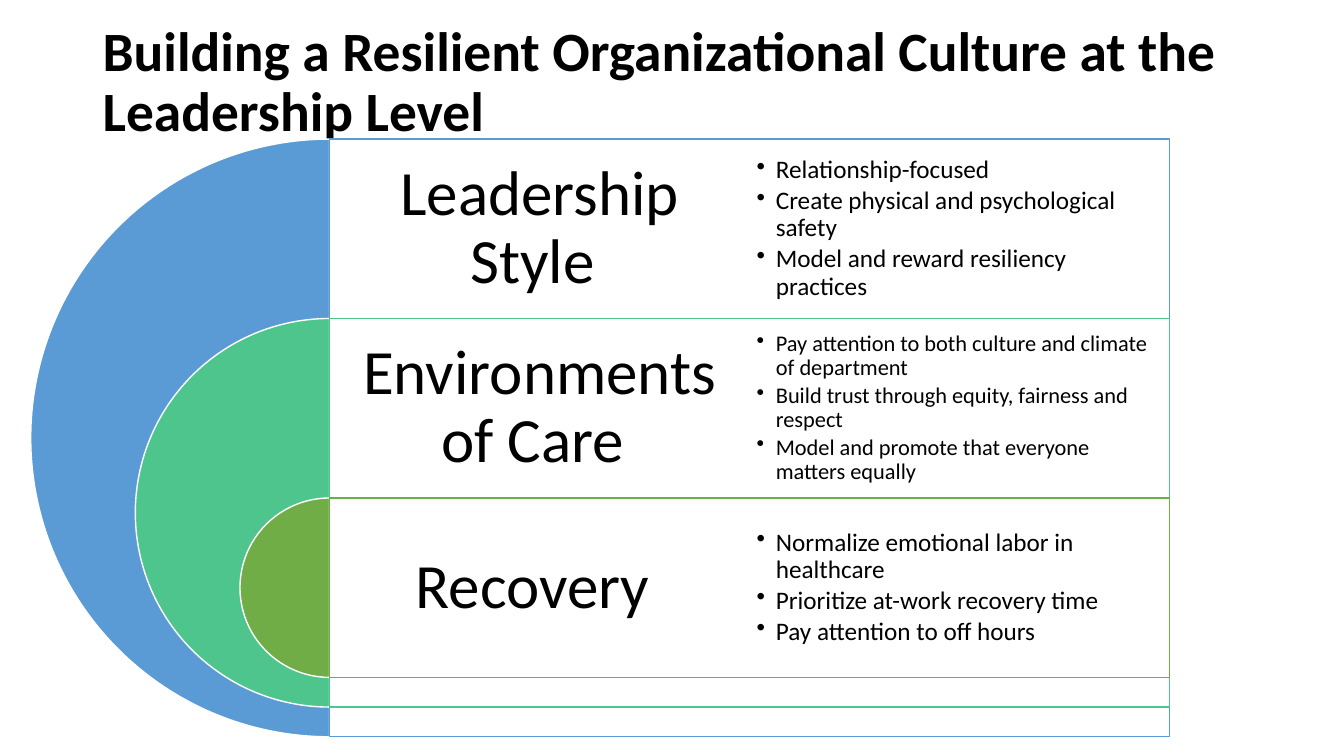
from lxml import etree
from pptx import Presentation
from pptx import util as u
from pptx.dml.color import RGBColor
from pptx.enum import shapes, text
from pptx.oxml import ns

BLACK = RGBColor(0x00, 0x00, 0x00)
WHITE = RGBColor(0xFF, 0xFF, 0xFF)
BLUE = RGBColor(0x5B, 0x9B, 0xD5)
TEAL = RGBColor(0x4D, 0xC5, 0x8D)
GREEN = RGBColor(0x70, 0xAD, 0x47)

FONT = "Calibri"
AXIS = 3.27
TOP = 1.38
ROW = 1.78
COLUMN = 4.165
DIAMETER = 5.93
SHRINK = 2.075
BULLET_INDENT = 0.19

TITLE = "Building a Resilient Organizational Culture at the Leadership Level"
LEVELS = [
    ("Leadership Style ", BLUE, 18, [
        "Relationship-focused",
        "Create physical and psychological safety",
        "Model and reward resiliency practices",
    ]),
    ("Environments of Care ", TEAL, 16, [
        "Pay attention to both culture and climate of department",
        "Build trust through equity, fairness and respect",
        "Model and promote that everyone matters equally",
    ]),
    ("Recovery ", GREEN, 18, [
        "Normalize emotional labor in healthcare",
        "Prioritize at-work recovery time",
        "Pay attention to off hours",
    ]),
]


def inches(*lengths):
    return [u.Inches(length) for length in lengths]


def add_bullet(para):
    para.level = 1
    properties = para._p.get_or_add_pPr()
    properties.set("marL", str(u.Inches(BULLET_INDENT)))
    properties.set("indent", str(-u.Inches(BULLET_INDENT)))
    etree.SubElement(properties, ns.qn("a:buChar")).set("char", "•")


def add_text(page, place, lines, size, inset, align=None, bold=False, bulleted=False):
    box = page.shapes.add_textbox(*inches(*place))
    frame = box.text_frame
    frame.word_wrap = True
    frame.vertical_anchor = text.MSO_ANCHOR.MIDDLE
    (frame.margin_left, frame.margin_top,
     frame.margin_right, frame.margin_bottom) = inches(*inset)
    for index, line in enumerate(lines):
        para = frame.paragraphs[0] if index == 0 else frame.add_paragraph()
        para.text = line
        para.alignment = align
        para.line_spacing = 0.9
        if bulleted:
            para.space_after = u.Pt(0.15 * size)
            add_bullet(para)
        para.font.name = FONT
        para.font.size = u.Pt(size)
        para.font.bold = bold
        para.font.color.rgb = BLACK


def add_outlined(page, kind, place, fill, line):
    shape = page.shapes.add_shape(kind, *inches(*place))
    shape.shadow.inherit = False
    shape.fill.solid()
    shape.fill.fore_color.rgb = fill
    shape.line.color.rgb = line
    shape.line.width = u.Pt(1)
    return shape


def add_half_disc(page, top, diameter, colour):
    place = (AXIS - diameter / 2, top, diameter, diameter)
    disc = add_outlined(page, shapes.MSO_SHAPE.PIE, place, colour, WHITE)
    disc.adjustments[0] = 54
    disc.adjustments[1] = 162


def add_panel(page, top, height, colour):
    place = (AXIS, top, 2 * COLUMN, height)
    panel = add_outlined(page, shapes.MSO_SHAPE.RECTANGLE, place, WHITE, colour)
    fill_colour = panel._element.spPr.find(ns.qn("a:solidFill"))[0]
    etree.SubElement(fill_colour, ns.qn("a:alpha")).set("val", "90000")


def add_level(page, index, heading, colour, size, points):
    top = TOP + index * ROW
    diameter = DIAMETER - index * SHRINK
    add_half_disc(page, top, diameter, colour)
    add_panel(page, top, diameter, colour)
    add_text(page, (AXIS, top, COLUMN, ROW), [heading], 45, [0.19] * 4,
             align=text.PP_ALIGN.CENTER)
    add_text(page, (AXIS + COLUMN, top, COLUMN, ROW), points, size, [0.07] * 4,
             bulleted=True)


def main():
    deck = Presentation()
    deck.slide_width, deck.slide_height = inches(13.33, 7.5)
    page = deck.slides.add_slide(deck.slide_layouts[6])
    add_text(page, (0.92, 0.4, 11.5, 1.45), [TITLE], 39.6, (0.1, 0.05, 0.1, 0.65),
             bold=True)
    for index, level in enumerate(LEVELS):
        add_level(page, index, *level)
    deck.save("out.pptx")


if __name__ == "__main__":
    main()
